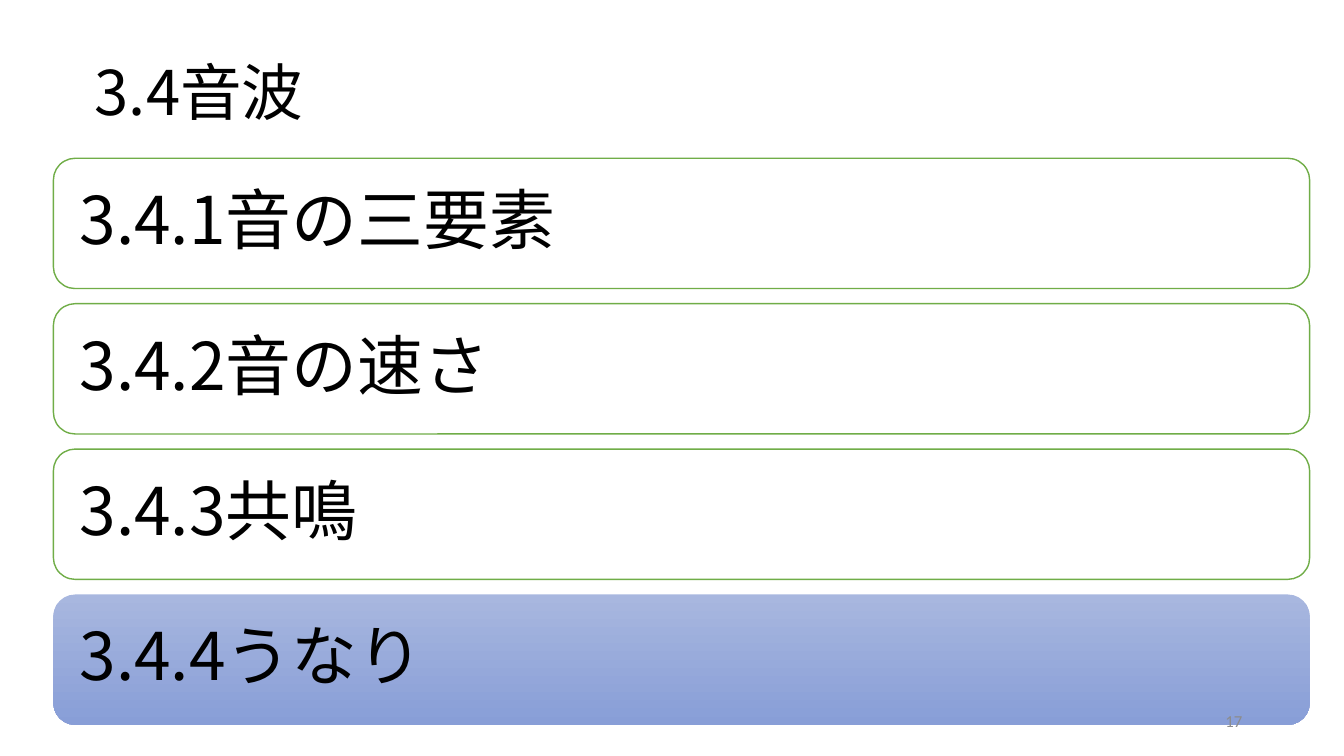
import pptx
import pptx.util
import pptx.dml.color
import pptx.enum.shapes
import pptx.enum.text
import pptx.oxml.ns
import lxml.etree

Inches = pptx.util.Inches
Pt = pptx.util.Pt
ALIGN = pptx.enum.text.PP_ALIGN

COLORS = {"text": "000000", "box": "FFFFFF", "border": "70AD47",
          "number": "8C8C8C", "grad_top": "A8B7DF", "grad_bottom": "889ED7"}
JP_FONT = "Noto Sans CJK JP"
SECTIONS = ["3.4.1音の三要素", "3.4.2音の速さ", "3.4.3共鳴", "3.4.4うなり"]
CURRENT = 3


def rgb(name):
    return pptx.dml.color.RGBColor.from_string(COLORS[name])


def write(sp, text, size, font=JP_FONT, color="text", inset=None, **para_format):
    """Fill a shape with one vertically centred paragraph."""
    tf = sp.text_frame
    frame = {"word_wrap": True,
             "vertical_anchor": pptx.enum.text.MSO_ANCHOR.MIDDLE,
             "auto_size": pptx.enum.text.MSO_AUTO_SIZE.NONE}
    if inset is not None:
        for side in ("left", "right", "top", "bottom"):
            frame["margin_" + side] = Inches(inset)
    p = tf.paragraphs[0]
    r = p.add_run()
    r.text = text
    for target, values in ((tf, frame), (p, para_format),
                           (r.font, {"size": Pt(size), "name": font})):
        for key, value in values.items():
            setattr(target, key, value)
    r.font.color.rgb = rgb(color)
    ea = lxml.etree.SubElement(r.font._element, pptx.oxml.ns.qn("a:ea"))
    ea.set("typeface", font)


def add_title(slide, x, y, w, h):
    sp = slide.shapes.title
    for key, value in zip(("left", "top", "width", "height"), (x, y, w, h)):
        setattr(sp, key, Inches(value))
    write(sp, "3.4音波", 44, alignment=ALIGN.LEFT, line_spacing=0.9)


def add_section(shapes, text, current, x, y, w, h):
    # Rounded box
    sp = shapes.add_shape(pptx.enum.shapes.MSO_SHAPE.ROUNDED_RECTANGLE,
                          Inches(x), Inches(y), Inches(w), Inches(h))
    sp.shadow.inherit = False
    if current:
        sp.fill.gradient()
        sp.fill.gradient_angle = 270
        for stop, name in zip(sp.fill.gradient_stops, ("grad_top", "grad_bottom")):
            stop.color.rgb = rgb(name)
        sp.line.fill.background()
    else:
        sp.fill.solid()
        sp.fill.fore_color.rgb = rgb("box")
        sp.line.color.rgb = rgb("border")
        sp.line.width = Pt(1)
    # Label inside the rounded corners
    pad = 0.06
    label = shapes.add_textbox(Inches(x + pad), Inches(y + pad),
                               Inches(w - 2 * pad), Inches(h - 2 * pad))
    write(label, text, 47, inset=0.2, alignment=ALIGN.LEFT,
          line_spacing=0.9, space_after=Pt(16))


def add_sections(slide, x, y, w, h):
    gap = 0.15
    box_h = (h - gap * (len(SECTIONS) - 1)) / len(SECTIONS)
    group = slide.shapes.add_group_shape()
    for i, text in enumerate(SECTIONS):
        add_section(group.shapes, text, i == CURRENT,
                    x, y + i * (box_h + gap), w, box_h)


def add_number(slide, x, y, w, h):
    sp = slide.shapes.add_textbox(Inches(x), Inches(y), Inches(w), Inches(h))
    write(sp, "17", 12, font="Calibri", color="number", alignment=ALIGN.RIGHT)


def main():
    prs = pptx.Presentation()
    prs.slide_width, prs.slide_height = Inches(13.33), Inches(7.5)
    slide = prs.slides.add_slide(prs.slide_layouts[5])
    add_title(slide, 0.84, 0.12, 9.33, 1.65)
    add_sections(slide, 0.53, 1.57, 12.46, 5.62)
    add_number(slide, 9.42, 6.95, 3, 0.4)
    prs.save("out.pptx")


if __name__ == "__main__":
    main()
